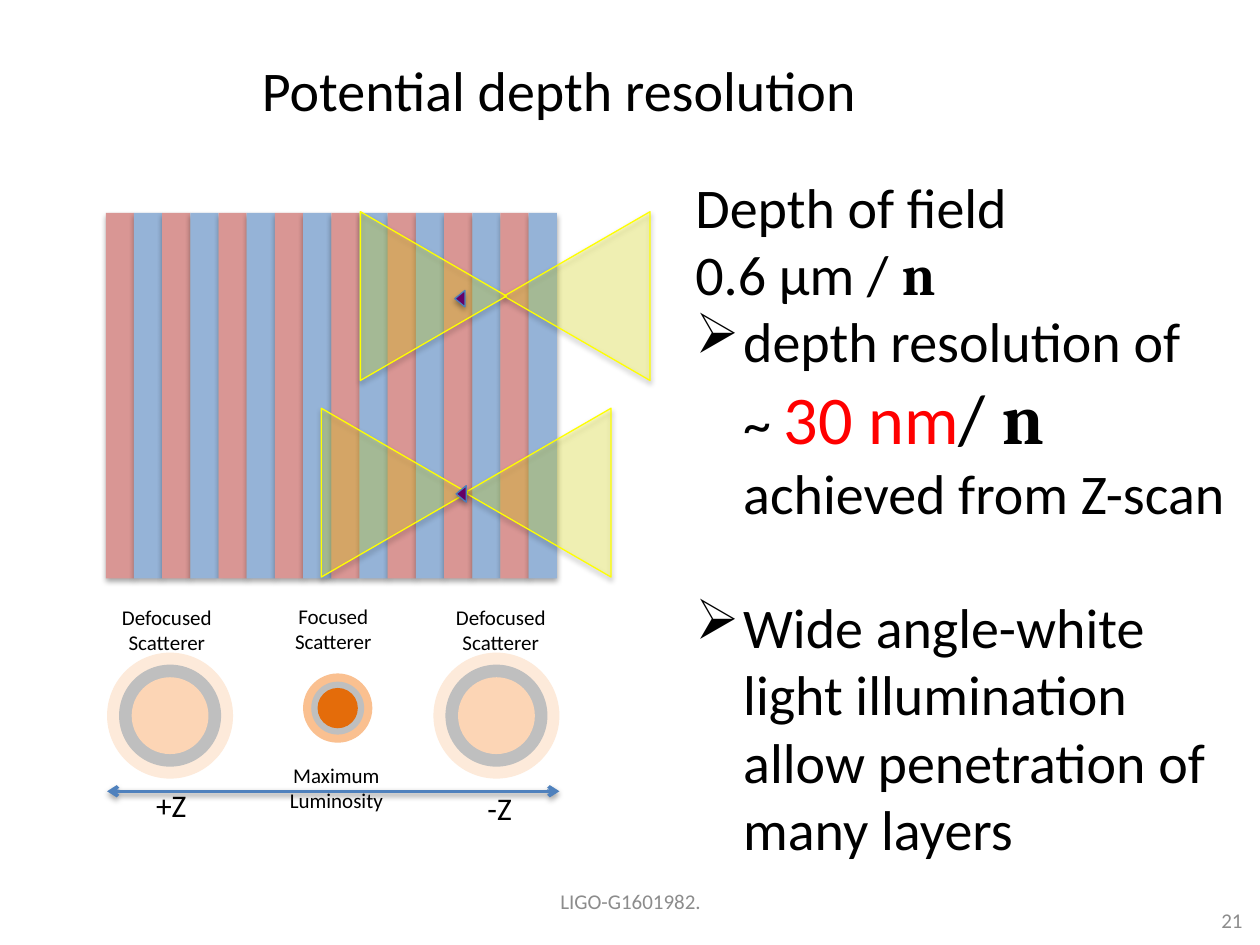
import pptx
import pptx.dml.color
import pptx.enum.shapes
import pptx.enum.text
import pptx.oxml
import pptx.oxml.ns
import pptx.util

Inches, Pt = pptx.util.Inches, pptx.util.Pt
RGBColor = pptx.dml.color.RGBColor
SHAPE = pptx.enum.shapes.MSO_SHAPE
ALIGN = pptx.enum.text.PP_ALIGN
ANCHOR = pptx.enum.text.MSO_ANCHOR
NAMESPACE = pptx.oxml.ns.nsdecls("a")

BLACK = RGBColor(0x00, 0x00, 0x00)
GREY = RGBColor(0x8C, 0x8C, 0x8C)
RED = RGBColor(0xFF, 0x00, 0x00)
LAYER_COLORS = [RGBColor(0xD9, 0x96, 0x94), RGBColor(0x95, 0xB3, 0xD7)]
YELLOW = RGBColor(0xFF, 0xFF, 0x00)
PURPLE = RGBColor(0x66, 0x00, 0x66)
MARKER_LINE = RGBColor(0x4B, 0x7E, 0xBC)
ARROW_BLUE = RGBColor(0x4F, 0x81, 0xBD)
RING_GREY = RGBColor(0xBF, 0xBF, 0xBF)
DEFOCUSED = [RGBColor(0xFD, 0xEA, 0xDA), RING_GREY, RGBColor(0xFC, 0xD5, 0xB5)]
FOCUSED = [RGBColor(0xFA, 0xC0, 0x90), RING_GREY, RGBColor(0xE4, 0x6C, 0x0A)]

# Content: each body paragraph is a list of (text, run format)
SYMBOL = {"font": "Cambria", "bold": True}
BODY = [
    {"runs": [("Depth of field\n0.6 µm / ", {}), ("n", SYMBOL)], "indent": (0.5, 0)},
    {"runs": [("depth resolution of\n~ ", {}), ("30 nm", {"size": 39, "color": RED}),
              ("/ ", {"size": 40}), ("n", {"size": 40, **SYMBOL}),
              ("\nachieved from Z-scan", {})],
     "indent": (0.88, -0.38), "bullet": "➢"},
    {"runs": [("Wide angle-white light illumination allow penetration of many layers", {})],
     "indent": (0.88, -0.38), "bullet": "➢", "before": 38.5},
]

# Text, box (left, top, width, height), format
LABELS = [
    ("Potential depth resolution", (1.98, 0.39, 4.98, 0.64), {"size": 32}),
    ("+Z", (1.14, 6.19, 0.45, 0.4), {"size": 18}),
    ("-Z", (3.77, 6.21, 0.4, 0.4), {"size": 18}),
    ("Maximum\nLuminosity", (2.19, 6, 0.96, 0.51), {"align": ALIGN.CENTER}),
    ("Defocused\nScatterer", (0.86, 4.75, 0.93, 0.51), {"align": ALIGN.CENTER}),
    ("Defocused\nScatterer", (3.51, 4.75, 0.93, 0.51), {"align": ALIGN.CENTER}),
    ("Focused\nScatterer", (2.22, 4.74, 0.85, 0.51), {"align": ALIGN.CENTER}),
    ("21", (7.63, 7.1, 2.33, 0.4),
     {"color": GREY, "align": ALIGN.RIGHT, "anchor": ANCHOR.MIDDLE, "wrap": True}),
    ("LIGO-G1601982.", (3.42, 6.95, 3.17, 0.4),
     {"color": GREY, "align": ALIGN.CENTER, "anchor": ANCHOR.MIDDLE, "wrap": True}),
]

# Layer stack, light cones (focus and marker centres) and scatterers
LAYER_COUNT = 16
STACK_LEFT, STACK_TOP, STACK_WIDTH, STACK_HEIGHT = 0.84, 1.69, 3.58, 2.9
CONE_BASE, CONE_LENGTH, CONE_OFFSET = 1.34, 1.16, 0.57
FOCI = [((4.01, 2.35), (3.65, 2.37)), ((3.7, 3.91), (3.66, 3.92))]
SCATTERERS = [
    ((1.35, 5.68), (1, 0.81, 0.61), DEFOCUSED),
    ((2.68, 5.62), (0.55, 0.42, 0.32), FOCUSED),
    ((3.94, 5.68), (1, 0.81, 0.61), DEFOCUSED),
]


def add_effects(item, shadow):
    effects = pptx.oxml.parse_xml(
        f'<a:effectLst {NAMESPACE}><a:outerShdw blurRad="{Pt(3.1)}" dist="{Pt(1.8)}" '
        'dir="5400000" rotWithShape="0"><a:srgbClr val="000000"><a:alpha val="35000"/>'
        '</a:srgbClr></a:outerShdw></a:effectLst>' if shadow
        else f'<a:effectLst {NAMESPACE}/>')
    item._element.spPr.append(effects)


def add_centered(slide, kind, center, size, fill, line=None, rotation=0, alpha=None, shadow=True):
    left, top = (middle - length / 2 for middle, length in zip(center, size))
    shape = slide.shapes.add_shape(kind, *map(Inches, (left, top, *size)))
    shape.rotation = rotation
    shape.fill.solid()
    shape.fill.fore_color.rgb = fill
    if alpha is not None:
        color = shape._element.spPr.find(".//" + pptx.oxml.ns.qn("a:srgbClr"))
        color.append(pptx.oxml.parse_xml(f'<a:alpha {NAMESPACE} val="{alpha * 1000}"/>'))
    if line is None:
        shape.line.fill.background()
    else:
        shape.line.color.rgb = line
        shape.line.width = Pt(0.75)
    add_effects(shape, shadow)
    return shape


def add_text(slide, text, box, size=12, font="Calibri", color=BLACK, bold=False,
             align=ALIGN.LEFT, anchor=ANCHOR.TOP, wrap=False):
    """Text is a string, or a list of paragraph dicts whose runs override the format."""
    frame = slide.shapes.add_textbox(*map(Inches, box)).text_frame
    frame.word_wrap = wrap
    frame.vertical_anchor = anchor
    defaults = {"size": size, "font": font, "color": color, "bold": bold}
    if isinstance(text, str):
        text = [{"runs": [(part, {})]} for part in text.split("\n")]
    for index, content in enumerate(text):
        paragraph = frame.paragraphs[0] if index == 0 else frame.add_paragraph()
        paragraph.alignment = align
        paragraph.space_before = Pt(content.get("before", 0))
        properties = paragraph._p.get_or_add_pPr()
        margin, indent = content.get("indent", (0, 0))
        properties.set("marL", str(Inches(margin)))
        properties.set("indent", str(Inches(indent)))
        if "bullet" in content:
            properties.append(pptx.oxml.parse_xml(
                f'<a:buChar {NAMESPACE} char="{content["bullet"]}"/>'))
        for run_text, overrides in content["runs"]:
            style = {**defaults, **overrides}
            for position, part in enumerate(run_text.split("\n")):
                if position:
                    paragraph.add_line_break()
                if part:
                    run = paragraph.add_run()
                    run.text = part
                    run.font.size = Pt(style["size"])
                    run.font.name = style["font"]
                    run.font.bold = style["bold"]
                    run.font.color.rgb = style["color"]


def add_depth_arrow(slide, start, end):
    arrow = slide.shapes.add_connector(
        pptx.enum.shapes.MSO_CONNECTOR.STRAIGHT, *map(Inches, (*start, *end)))
    arrow.line.color.rgb = ARROW_BLUE
    arrow.line.width = Pt(2)
    for tag in ("headEnd", "tailEnd"):
        arrow.line._get_or_add_ln().append(
            pptx.oxml.parse_xml(f'<a:{tag} {NAMESPACE} type="arrow"/>'))
    add_effects(arrow, True)


def main():
    presentation = pptx.Presentation()
    presentation.slide_width, presentation.slide_height = Inches(10), Inches(7.5)
    slide = presentation.slides.add_slide(presentation.slide_layouts[6])

    # Alternating coating layers
    step = STACK_WIDTH / LAYER_COUNT
    for index in range(LAYER_COUNT):
        center = (STACK_LEFT + (index + 0.5) * step, STACK_TOP + STACK_HEIGHT / 2)
        add_centered(slide, SHAPE.RECTANGLE, center, (step, STACK_HEIGHT),
                     LAYER_COLORS[index % 2])

    add_text(slide, BODY, (4.92, 1.32, 5.05, 6.16), size=32, wrap=True)

    # Light cones meeting at each focus, with the scatterer marker
    for (focus_x, focus_y), marker in FOCI:
        for side, rotation in ((1, 270), (-1, 90)):
            add_centered(slide, SHAPE.ISOSCELES_TRIANGLE,
                         (focus_x + side * CONE_OFFSET, focus_y), (CONE_BASE, CONE_LENGTH),
                         YELLOW, line=YELLOW, rotation=rotation, alpha=24)
        add_centered(slide, SHAPE.ISOSCELES_TRIANGLE, marker, (0.13, 0.08), PURPLE,
                     line=MARKER_LINE, rotation=270)

    # Scatterers as concentric discs
    for center, diameters, colors in SCATTERERS:
        for diameter, color in zip(diameters, colors):
            add_centered(slide, SHAPE.OVAL, center, (diameter, diameter), color, shadow=False)

    add_depth_arrow(slide, (0.85, 6.28), (4.44, 6.28))

    # Title, labels and footer
    for text, box, style in LABELS:
        add_text(slide, text, box, **style)

    presentation.save("out.pptx")


if __name__ == "__main__":
    main()
